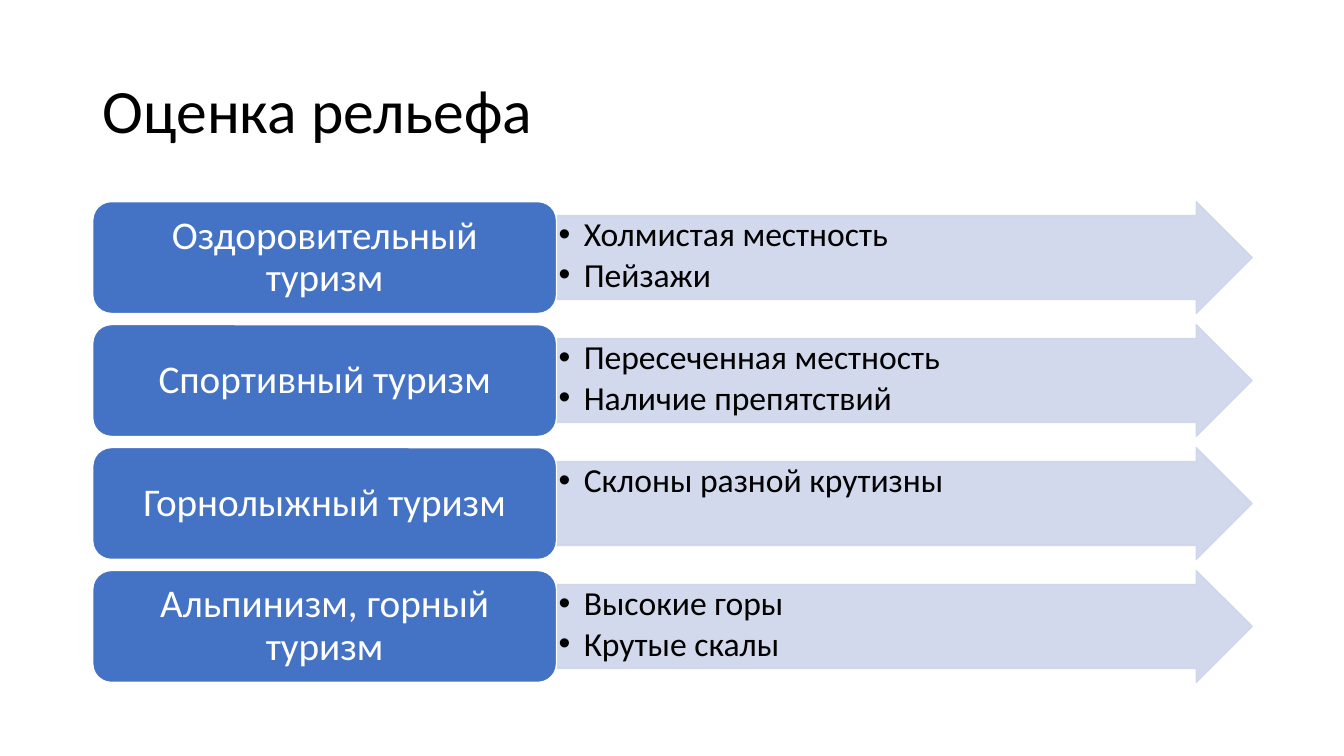
from dataclasses import dataclass

import lxml.etree
import pptx
import pptx.dml.color
import pptx.enum.shapes
import pptx.enum.text
import pptx.oxml.ns
import pptx.util

SHAPE = pptx.enum.shapes.MSO_SHAPE
ALIGN = pptx.enum.text.PP_ALIGN
ANCHOR = pptx.enum.text.MSO_ANCHOR
Inches = pptx.util.Inches
Pt = pptx.util.Pt

TOURISM = [
    ("Оздоровительный туризм", ["Холмистая местность", "Пейзажи"]),
    ("Спортивный туризм", ["Пересеченная местность", "Наличие препятствий"]),
    ("Горнолыжный туризм", ["Склоны разной крутизны"]),
    ("Альпинизм, горный туризм", ["Высокие горы", "Крутые скалы"]),
]


@dataclass(frozen=True)
class Theme:
    font: str = "Calibri"
    ink: str = "000000"
    paper: str = "FFFFFF"
    accent: str = "4472C4"
    tint: str = "CFD5EA"
    title_size: int = 44
    label_size: int = 28
    list_size: int = 24


class ReliefPage:
    """Draws titled rows of labels and arrows on a grid of ten columns."""

    left, top, column = 0.92, 2, 1.15
    row_height, row_pitch = 1.11, 1.22

    def __init__(self, deck, theme):
        self.theme = theme
        self.page = deck.slides.add_slide(deck.slide_layouts[5])

    def place(self, shape, left, top, width, height):
        shape.left, shape.top = Inches(left), Inches(top)
        shape.width, shape.height = Inches(width), Inches(height)

    def set_text(self, box, lines, size, color, align, after=0, bullets=False):
        frame = box.text_frame
        frame.word_wrap = True
        frame.text = "\n".join(lines)
        for para in frame.paragraphs:
            para.alignment = align
            para.line_spacing = 0.9
            para.space_before, para.space_after = Pt(0), Pt(after)
            if bullets:
                self.bullet(para)
            para.font.name = self.theme.font
            para.font.size = Pt(size)
            para.font.color.rgb = pptx.dml.color.RGBColor.from_string(color)

    def bullet(self, para):
        properties = para._p.get_or_add_pPr()
        properties.set("marL", str(Inches(0.25)))
        properties.set("indent", str(Inches(-0.25)))
        for tag, name, value in (("a:buFont", "typeface", "Arial"), ("a:buChar", "char", "•")):
            mark = lxml.etree.SubElement(properties, pptx.oxml.ns.qn(tag))
            mark.set(name, value)

    def title(self, text):
        box = self.page.shapes.title
        self.place(box, self.left, 0.4, 10 * self.column, 1.45)
        box.text_frame.vertical_anchor = ANCHOR.MIDDLE
        self.set_text(box, [text], self.theme.title_size, self.theme.ink, ALIGN.LEFT)

    def block(self, kind, first, span, row, fill, line, insets):
        shape = self.page.shapes.add_shape(kind, 0, 0, 0, 0)
        self.place(shape, self.left + first * self.column, self.top + row * self.row_pitch,
                   span * self.column, self.row_height)
        shape.shadow.inherit = False
        shape.fill.solid()
        shape.fill.fore_color.rgb = pptx.dml.color.RGBColor.from_string(fill)
        shape.line.color.rgb = pptx.dml.color.RGBColor.from_string(line)
        shape.line.width = Pt(1)
        frame = shape.text_frame
        frame.margin_left = frame.margin_right = Inches(insets[0])
        frame.margin_top = frame.margin_bottom = Inches(insets[1])
        return shape

    def arrow(self, row, lines):
        theme = self.theme
        shape = self.block(SHAPE.RIGHT_ARROW, 4, 6, row, theme.tint, theme.tint, (0.02, 0.02))
        shape.adjustments[0], shape.adjustments[1] = 0.75, 0.5
        for color in shape._element.spPr.iter(pptx.oxml.ns.qn("a:srgbClr")):
            lxml.etree.SubElement(color, pptx.oxml.ns.qn("a:alpha")).set("val", "90000")
        shape.text_frame.vertical_anchor = ANCHOR.TOP
        self.set_text(shape, lines, theme.list_size, theme.ink, ALIGN.LEFT, 3, True)

    def label(self, row, text):
        theme = self.theme
        shape = self.block(SHAPE.ROUNDED_RECTANGLE, 0, 4, row, theme.accent, theme.paper, (0.12, 0.06))
        shape.text_frame.vertical_anchor = ANCHOR.MIDDLE
        self.set_text(shape, [text], theme.label_size, theme.paper, ALIGN.CENTER)


def main():
    deck = pptx.Presentation()
    deck.slide_width, deck.slide_height = Inches(13.33), Inches(7.5)
    relief = ReliefPage(deck, Theme())
    relief.title("Оценка рельефа")
    for row, (name, features) in enumerate(TOURISM):
        relief.arrow(row, features)
        relief.label(row, name)
    deck.save("out.pptx")


if __name__ == "__main__":
    main()
